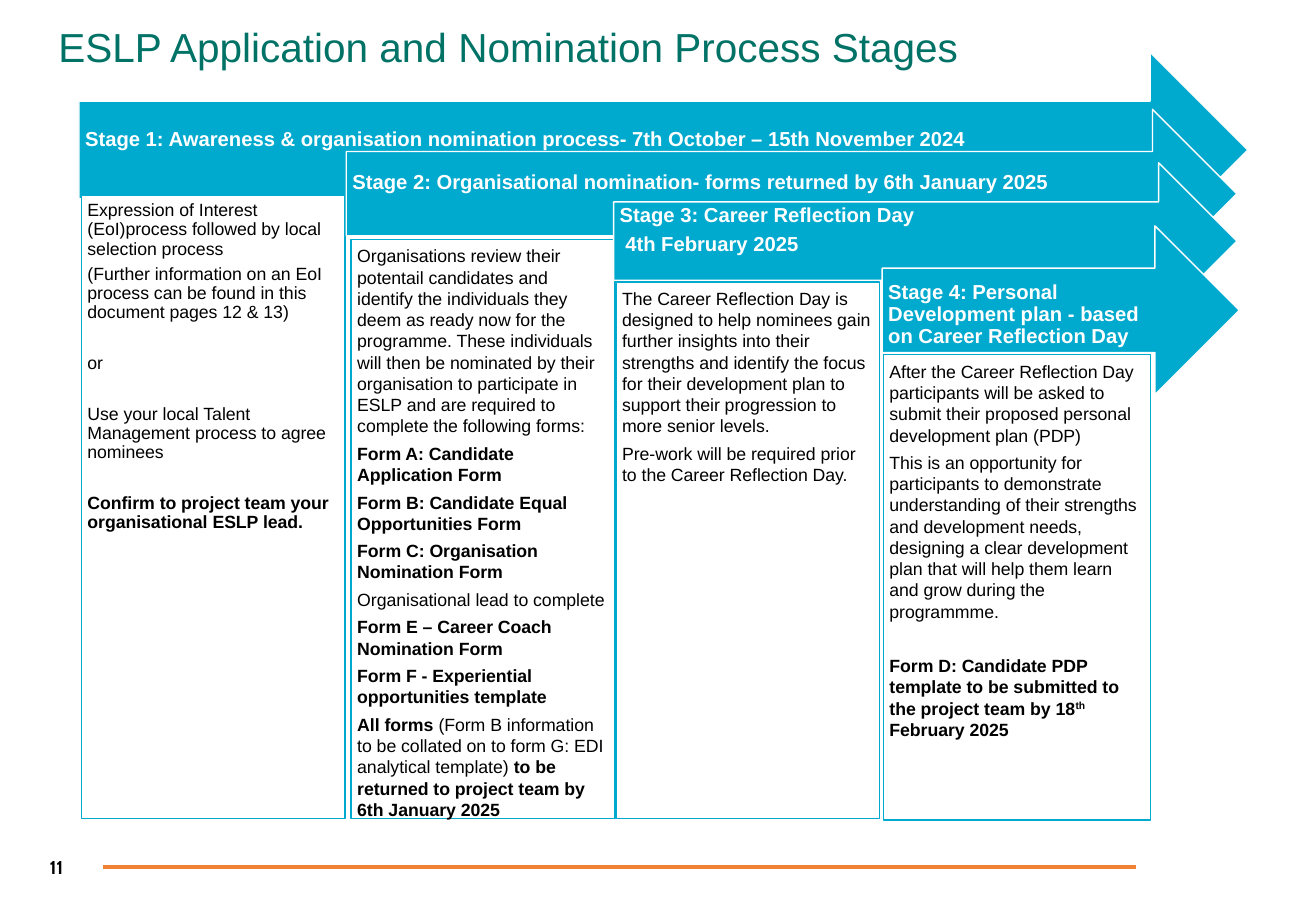
from dataclasses import dataclass

from lxml import etree
from pptx import Presentation
from pptx.dml.color import RGBColor
from pptx.enum.shapes import MSO_CONNECTOR as Connector, MSO_SHAPE as Shape
from pptx.enum.text import MSO_ANCHOR as Anchor, MSO_AUTO_SIZE as AutoSize, PP_ALIGN as Align
from pptx.oxml.ns import qn
from pptx.util import Emu, Pt


@dataclass(frozen=True)
class Theme:
    font: str = "Arial"
    number_font: str = "Cabin"
    title: RGBColor = RGBColor(0x00, 0x72, 0x66)
    stage: RGBColor = RGBColor(0x00, 0xA9, 0xCE)
    rule: RGBColor = RGBColor(0xEF, 0x82, 0x33)
    white: RGBColor = RGBColor(0xFF, 0xFF, 0xFF)
    black: RGBColor = RGBColor(0x00, 0x00, 0x00)
    title_size: float = 24
    heading_size: float = 12
    body_size: float = 10.5
    number_size: float = 11
    outline: float = 0.85
    rule_width: float = 2.25


theme = Theme()
PX = 9144
AFTER = 0.35


def px(*lengths):
    return [Emu(length * PX) for length in lengths]


def write(frame, paragraphs, size, color, line_spacing, space_after, font=theme.font):
    for index, (space_before, runs) in enumerate(paragraphs):
        paragraph = frame.paragraphs[0] if index == 0 else frame.add_paragraph()
        paragraph.alignment = Align.LEFT
        paragraph.line_spacing = line_spacing
        paragraph.space_before = Pt(space_before)
        paragraph.space_after = Pt(space_after)
        for text, style in runs:
            run = paragraph.add_run()
            run.text = text
            run.font.name = font
            run.font.size = Pt(size)
            run.font.color.rgb = color
            run.font.bold = style in ("bold", "super")
            if style == "super":
                run.font._element.set("baseline", "30000")


stages = [
    {
        "arrow": (65, 43, 962, 161),
        "box": (67, 161, 217, 513),
        "shift": 0,
        "spacing": 0.9,
        "heading": ["Stage 1: Awareness & organisation nomination process- 7th October – 15th November 2024"],
        "body": [
            (0, [("Expression of Interest (EoI)process followed by local selection process", "plain")]),
            (0, [("(Further information on an EoI process can be found in this document pages 12 & 13)", "plain")]),
            (15, [("or", "plain")]),
            (15, [("Use your local Talent Management process to agree nominees", "plain")]),
            (15, [("Confirm to project team your organisational ESLP lead.", "bold")]),
        ],
    },
    {
        "arrow": (285, 90, 733, 139),
        "box": (289, 197, 217, 477),
        "shift": 0,
        "spacing": 1.0,
        "heading": ["Stage 2: Organisational nomination- forms returned by 6th January 2025"],
        "body": [
            (0, [("Organisations review their potentail candidates and identify the individuals they deem "
                  "as ready now for the programme. These individuals will then be nominated by their "
                  "organisation to participate in ESLP and are required to complete the following forms:",
                  "plain")]),
            (0, [("Form A: Candidate Application Form", "bold")]),
            (0, [("Form B: Candidate Equal Opportunities Form", "bold")]),
            (0, [("Form C: Organisation Nomination Form", "bold")]),
            (0, [("Organisational lead to complete", "plain")]),
            (0, [("Form E – Career Coach Nomination Form", "bold")]),
            (0, [("Form F - Experiential opportunities template", "bold")]),
            (0, [("All forms ", "bold"),
                 ("(Form B information to be collated on to form G: EDI analytical template)", "plain"),
                 (" to be returned to project team by 6th January 2025", "bold")]),
        ],
    },
    {
        "arrow": (505, 134, 513, 129),
        "box": (507, 232, 217, 442),
        "shift": 0,
        "spacing": 1.0,
        "heading": ["Stage 3: Career Reflection Day", " 4th February 2025"],
        "body": [
            (0, [("The Career Reflection Day is designed to help nominees gain further insights into their "
                  "strengths and identify the focus for their development plan to support their "
                  "progression to more senior levels.", "plain")]),
            (0, [("Pre-work will be required prior to the Career Reflection Day.", "plain")]),
        ],
    },
    {
        "arrow": (726, 186, 294, 139),
        "box": (727, 292, 220, 383),
        "shift": 12,
        "spacing": 1.0,
        "heading": ["Stage 4: Personal Development plan - based on Career Reflection Day"],
        "body": [
            (0, [("After the Career Reflection Day participants will be asked to submit their proposed "
                  "personal development plan (PDP)", "plain")]),
            (0, [("This is an opportunity for participants to demonstrate understanding of their strengths "
                  "and development needs, designing a clear development plan that will help them learn "
                  "and grow during the programmme.", "plain")]),
            (16, [("Form D: Candidate PDP template to be submitted to the project team by 18", "bold"),
                  ("th", "super"),
                  (" February 2025", "bold")]),
        ],
    },
]

presentation = Presentation()
presentation.slide_width, presentation.slide_height = px(1083, 750)
slide = presentation.slides.add_slide(presentation.slide_layouts[5])

title = slide.shapes.title
title.left, title.top, title.width, title.height = px(38, 7, 772, 34)
title.text_frame.auto_size = AutoSize.NONE
title.text_frame.vertical_anchor = Anchor.TOP
title.text_frame.word_wrap = True
write(title.text_frame, [(0, [("ESLP Application and Nomination Process Stages", "plain")])],
      theme.title_size, theme.title, 1.15, 10)

footer_rule = slide.shapes.add_connector(Connector.STRAIGHT, *px(85, 714, 935, 714))
footer_rule.line.color.rgb = theme.rule
footer_rule.line.width = Pt(theme.rule_width)
etree.SubElement(footer_rule._element.spPr, qn("a:effectLst"))

page_number = slide.shapes.add_textbox(*px(31, 694, 136, 40))
page_number.text_frame.word_wrap = True
page_number.text_frame.vertical_anchor = Anchor.MIDDLE
write(page_number.text_frame, [(0, [("11", "bold")])],
      theme.number_size, theme.black, 1.0, 0, theme.number_font)

for stage in stages:
    shift = stage["shift"]
    heading = [(0, [(text, "bold")]) for text in stage["heading"]]
    parts = [
        (Shape.RIGHT_ARROW, stage["arrow"], theme.stage, theme.white, Anchor.MIDDLE,
         (5, 5 + shift, 28, 22 - shift), heading, theme.heading_size, theme.white, 0.9),
        (Shape.RECTANGLE, stage["box"], theme.white, theme.stage, Anchor.TOP,
         (5, 5, 5, 5), stage["body"], theme.body_size, theme.black, stage["spacing"]),
    ]
    for kind, place, fill, outline, anchor, insets, paragraphs, size, color, spacing in parts:
        shape = slide.shapes.add_shape(kind, *px(*place))
        shape.shadow.inherit = False
        shape.fill.solid()
        shape.fill.fore_color.rgb = fill
        shape.line.color.rgb = outline
        shape.line.width = Pt(theme.outline)
        frame = shape.text_frame
        frame.word_wrap = True
        frame.vertical_anchor = anchor
        frame.margin_left, frame.margin_top, frame.margin_right, frame.margin_bottom = px(*insets)
        write(frame, paragraphs, size, color, spacing, round(size * AFTER, 1))

presentation.save("out.pptx")
